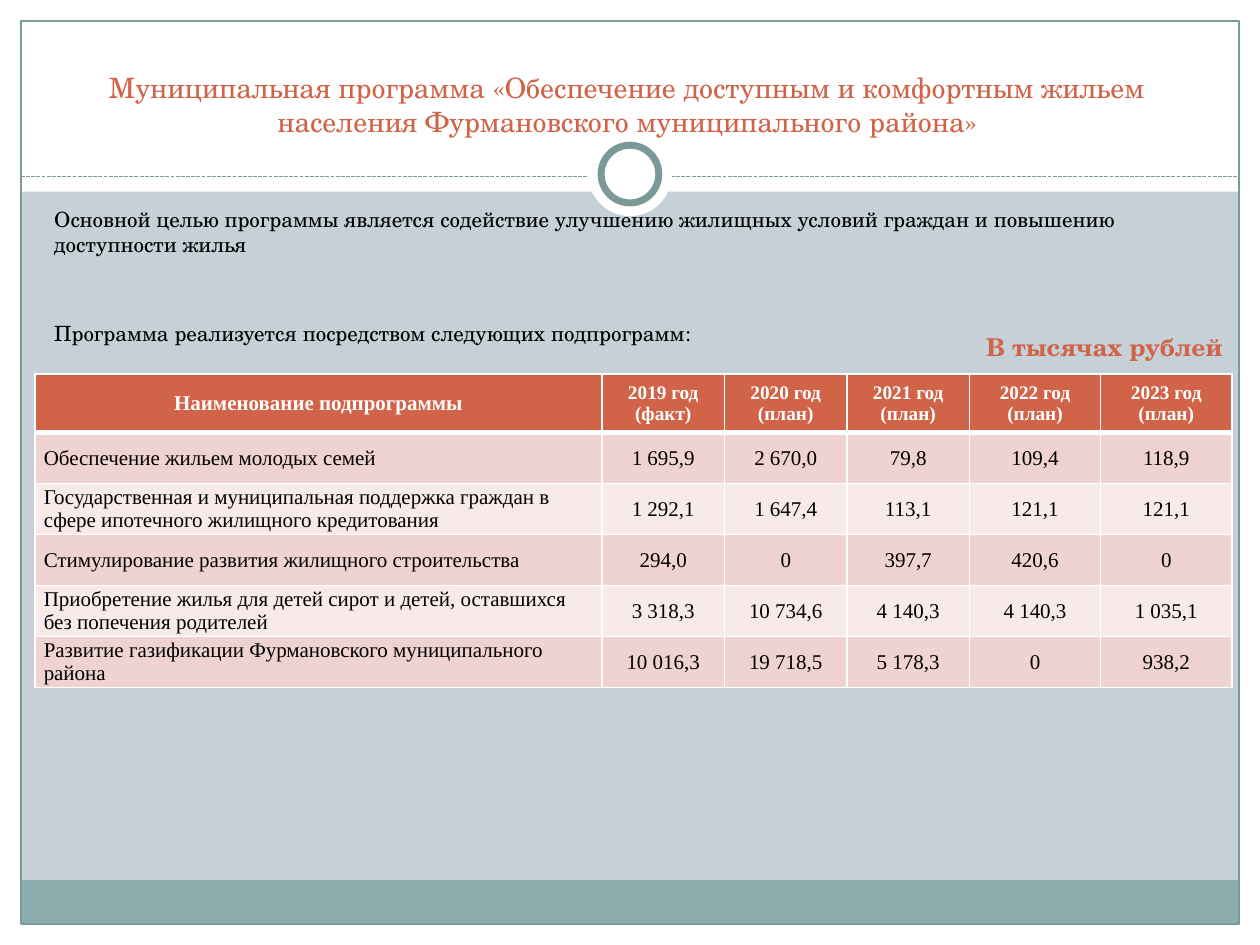
from typing import NamedTuple, Optional

import pptx
import pptx.dml.color
import pptx.enum.dml
import pptx.enum.shapes
import pptx.enum.text
import pptx.oxml
import pptx.oxml.ns
import pptx.util

Pt = pptx.util.Pt
RGBColor = pptx.dml.color.RGBColor
MSO_SHAPE = pptx.enum.shapes.MSO_SHAPE
PP_ALIGN = pptx.enum.text.PP_ALIGN
MSO_ANCHOR = pptx.enum.text.MSO_ANCHOR

WHITE = RGBColor(0xFF, 0xFF, 0xFF)
BLACK = RGBColor(0, 0, 0)
SLATE = RGBColor(0xC5, 0xD1, 0xD7)
TEAL = RGBColor(0x8C, 0xAD, 0xAE)
TEAL_DARK = RGBColor(0x7C, 0x99, 0x9A)
RUST = RGBColor(0xD1, 0x63, 0x49)
BAND_DARK = RGBColor(0xEE, 0xD3, 0xD0)
BAND_LIGHT = RGBColor(0xF7, 0xEA, 0xE9)
SERIF = "TeX Gyre Schola"
TABLE_FONT = "Times New Roman"

WIDTH, HEIGHT, MARGIN = 720, 540, 12


class Panel(NamedTuple):
    left: float
    top: float
    width: float
    height: float
    fill: Optional[RGBColor] = None
    line_width: float = 0
    kind: MSO_SHAPE = MSO_SHAPE.RECTANGLE


class TextStyle(NamedTuple):
    size: float
    color: RGBColor
    font: str = SERIF
    bold: bool = False
    align: PP_ALIGN = PP_ALIGN.LEFT


FRAME = [
    Panel(0, HEIGHT - MARGIN, WIDTH, MARGIN, WHITE),
    Panel(0, 0, WIDTH, 109.5, WHITE),
    Panel(0, 0, MARGIN, HEIGHT, WHITE),
    Panel(WIDTH - MARGIN, 0, MARGIN, HEIGHT, WHITE),
    Panel(MARGIN, 503, WIDTH - 2 * MARGIN, 25, TEAL),
    Panel(MARGIN, MARGIN, WIDTH - 2 * MARGIN, HEIGHT - 2 * MARGIN, line_width=0.75),
]
RING = [
    Panel(336, 75.5, 48, 48, WHITE, kind=MSO_SHAPE.OVAL),
    Panel(343.5, 83, 33, 33, WHITE, 4, MSO_SHAPE.OVAL),
]

TITLE = ("Муниципальная программа «Обеспечение доступным и комфортным жильем "
         "населения Фурмановского муниципального района»")
BODY = [
    "Основной целью программы является содействие улучшению жилищных условий "
    "граждан и повышению доступности жилья",
    "Программа реализуется посредством следующих подпрограмм:",
]
HEADER = ["Наименование подпрограммы", "2019 год\n(факт)"]
HEADER += [f"{year} год\n(план)" for year in range(2020, 2024)]
ROWS = [
    ["Обеспечение жильем молодых семей",
     "1 695,9", "2 670,0", "79,8", "109,4", "118,9"],
    ["Государственная и муниципальная поддержка граждан в сфере ипотечного "
     "жилищного кредитования",
     "1 292,1", "1 647,4", "113,1", "121,1", "121,1"],
    ["Стимулирование развития жилищного строительства",
     "294,0", "0", "397,7", "420,6", "0"],
    ["Приобретение жилья для детей сирот и детей, оставшихся без попечения родителей",
     "3 318,3", "10 734,6", "4 140,3", "4 140,3", "1 035,1"],
    ["Развитие газификации Фурмановского муниципального района",
     "10 016,3", "19 718,5", "5 178,3", "0", "938,2"],
]
COLUMN_WIDTHS = [324, 70, 70, 70, 75, 75]
HEADER_HEIGHT, ROW_HEIGHT = 33.5, 29.15


def draw_panel(s, panel: Panel) -> None:
    sp = s.shapes.add_shape(panel.kind, Pt(panel.left), Pt(panel.top),
                            Pt(panel.width), Pt(panel.height))
    sp.shadow.inherit = False
    if panel.fill is None:
        sp.fill.background()
    else:
        sp.fill.solid()
        sp.fill.fore_color.rgb = panel.fill
    if panel.line_width:
        sp.line.color.rgb = TEAL_DARK
        sp.line.width = Pt(panel.line_width)
    else:
        sp.line.fill.background()


def draw_divider(s, y: float) -> None:
    line = s.shapes.add_connector(pptx.enum.shapes.MSO_CONNECTOR.STRAIGHT,
                                  Pt(MARGIN), Pt(y), Pt(WIDTH - MARGIN), Pt(y))
    line.line.color.rgb = TEAL_DARK
    line.line.width = Pt(0.75)
    line.line.dash_style = pptx.enum.dml.MSO_LINE.SQUARE_DOT
    pptx.oxml.ns.qn("a:effectLst")
    line.element.spPr.append(pptx.oxml.parse_xml(
        f'<a:effectLst {pptx.oxml.ns.nsdecls("a")}/>'))


def write(tf, text: str, style: TextStyle) -> None:
    tf.text = text
    tf.word_wrap = True
    for p in tf.paragraphs:
        p.alignment = style.align
        for r in p.runs:
            r.font.name = style.font
            r.font.size = Pt(style.size)
            r.font.bold = style.bold
            r.font.color.rgb = style.color


def place(s, sp, left: float, top: float, width: float, height: float) -> None:
    """Move a placeholder to its position, in front of what is drawn so far."""
    sp.left, sp.top, sp.width, sp.height = map(Pt, (left, top, width, height))
    sp.text_frame.auto_size = pptx.enum.text.MSO_AUTO_SIZE.NONE
    s.shapes.element.append(sp.element)


def add_borders(cell, top: float, bottom: float) -> None:
    tc_pr = cell._tc.get_or_add_tcPr()
    for side, width in (("L", 1), ("R", 1), ("T", top), ("B", bottom)):
        tc_pr.append(pptx.oxml.parse_xml(
            f'<a:ln{side} {pptx.oxml.ns.nsdecls("a")} w="{Pt(width)}"><a:solidFill>'
            f'<a:srgbClr val="{WHITE}"/></a:solidFill></a:ln{side}>'))


def draw_table(s, left: float, top: float) -> None:
    heights = [HEADER_HEIGHT] + [ROW_HEIGHT] * len(ROWS)
    table = s.shapes.add_table(len(heights), len(COLUMN_WIDTHS), Pt(left), Pt(top),
                               Pt(sum(COLUMN_WIDTHS)), Pt(sum(heights))).table
    for column, width in zip(table.columns, COLUMN_WIDTHS):
        column.width = Pt(width)
    for i, (height, values) in enumerate(zip(heights, [HEADER] + ROWS)):
        table.rows[i].height = Pt(height)
        is_header = i == 0
        fill = RUST if is_header else BAND_DARK if i % 2 else BAND_LIGHT
        for j, value in enumerate(values):
            cell = table.cell(i, j)
            write(cell.text_frame, value, TextStyle(
                11 if is_header and j else 12, WHITE if is_header else BLACK,
                TABLE_FONT, is_header,
                PP_ALIGN.CENTER if is_header or j else PP_ALIGN.LEFT))
            cell.vertical_anchor = MSO_ANCHOR.MIDDLE
            cell.margin_left = cell.margin_right = Pt(5)
            cell.margin_top = cell.margin_bottom = 0
            add_borders(cell, 3 if i == 1 else 1, 3 if is_header else 1)
            cell.fill.solid()
            cell.fill.fore_color.rgb = fill


def main() -> None:
    prs = pptx.Presentation()
    prs.slide_width, prs.slide_height = Pt(WIDTH), Pt(HEIGHT)
    s = prs.slides.add_slide(prs.slide_layouts[1])
    s.background.fill.solid()
    s.background.fill.fore_color.rgb = SLATE

    for panel in FRAME:
        draw_panel(s, panel)
    draw_divider(s, 100.8)
    for panel in RING:
        draw_panel(s, panel)

    title = s.shapes.title
    place(s, title, 22.5, 44.5, 672, 38)
    write(title.text_frame, TITLE, TextStyle(16, RUST, align=PP_ALIGN.CENTER))
    title.text_frame.vertical_anchor = MSO_ANCHOR.BOTTOM

    body = s.placeholders[1]
    place(s, body, 23.75, 114.5, 669.5, 48)
    write(body.text_frame, "\n".join(BODY), TextStyle(12, BLACK))
    for p, gap in zip(body.text_frame.paragraphs, (2.4, 36)):
        p.space_before = Pt(gap)
        p_pr = p._p.get_or_add_pPr()
        p_pr.set("marL", "0")
        p_pr.set("indent", "0")
        p_pr.append(pptx.oxml.parse_xml(f'<a:buNone {pptx.oxml.ns.nsdecls("a")}/>'))

    draw_table(s, 20, 213.75)
    unit = s.shapes.add_textbox(Pt(556.5), Pt(186), Pt(163.5), Pt(22))
    write(unit.text_frame, "В тысячах рублей", TextStyle(14, RUST, bold=True))
    prs.save("out.pptx")


if __name__ == "__main__":
    main()
